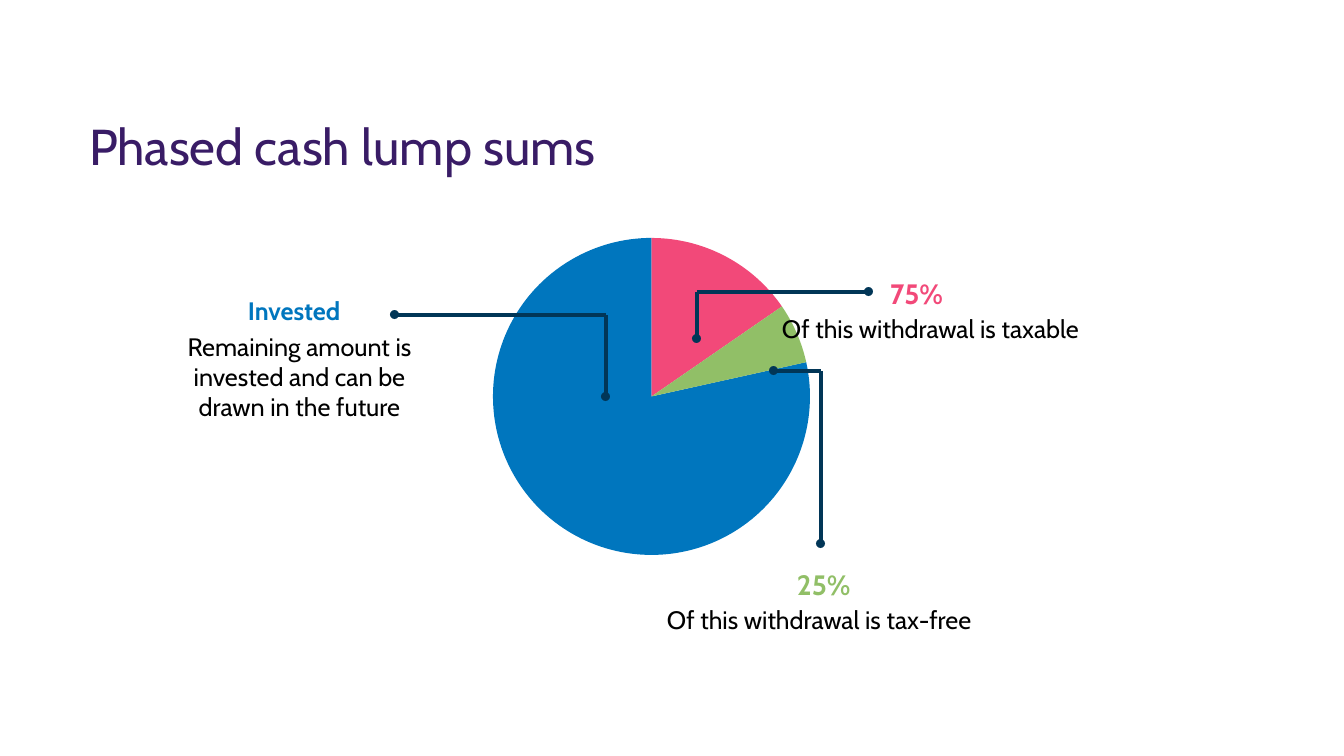
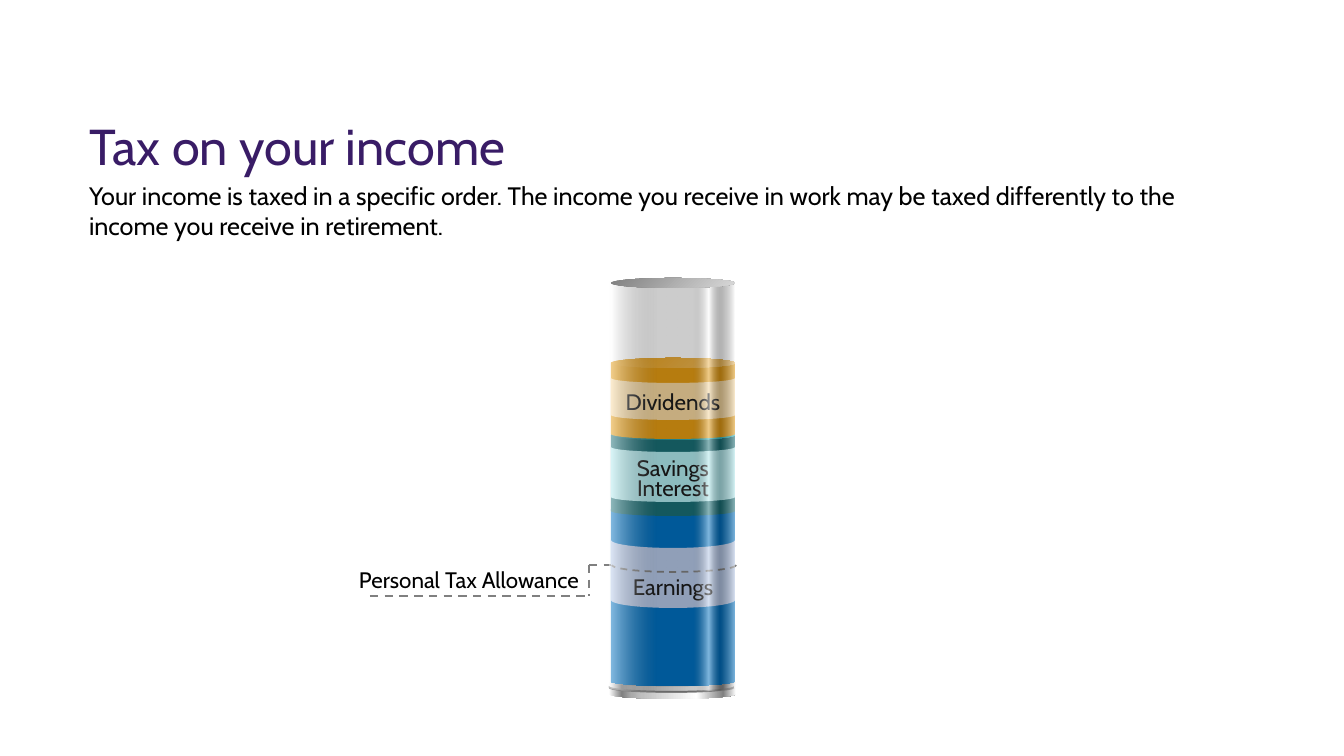
from math import cos, pi, sin

from lxml import etree
from pptx import Presentation
from pptx.dml.color import RGBColor
from pptx.enum.dml import MSO_LINE
from pptx.enum.shapes import MSO_CONNECTOR, MSO_SHAPE
from pptx.enum.text import MSO_ANCHOR, PP_ALIGN
from pptx.oxml import parse_xml
from pptx.oxml.ns import nsdecls, qn
from pptx.util import Emu, Pt

SCALE = 914400 / 100.8
FONT = "Cabin"
OVAL, PIE = MSO_SHAPE.OVAL, MSO_SHAPE.PIE
STRAIGHT, DASH = MSO_CONNECTOR.STRAIGHT, MSO_LINE.DASH
LEFT, MID, RIGHT = PP_ALIGN.LEFT, PP_ALIGN.CENTER, PP_ALIGN.RIGHT
TOP, CENTRE = MSO_ANCHOR.TOP, MSO_ANCHOR.MIDDLE

HEX = {
    "title": "391C66", "black": "000000", "ink": "1B1B1B", "navy": "013657",
    "pink": "F24979", "green": "91BF67", "blue": "0076BE", "grey": "808080",
    "earn": "0070C0", "earn_tint": "B4C7E7",
    "save": "196E75", "save_tint": "B0EAEE", "save_lid": "38C9D4",
    "gold": "E49B13", "gold_tint": "F7D89F", "gold_lid": "F2BF64",
    "silver": "D9D9D9", "steel": "AAAAAA", "ash": "BFBFBF", "white": "FFFFFF",
}

# Gradient stops: position, colour, opacity
METAL = [(0, "white", 100), (10, "grey", 100), (18, "steel", 100),
         (26, "ash", 100), (69, "white", 100), (90, "grey", 100),
         (100, "white", 100)]
GLASS = [(0, "white", 50), (2, "white", 50), (38, "black", 20),
         (67, "black", 20), (79, "white", 50), (88, "black", 30),
         (100, "white", 50)]


def px(n):
    return Emu(round(n * SCALE))


def rgb(name):
    return RGBColor.from_string(HEX[name])


# Shared drawing helpers
def paint(shape, fill, angle=0):
    """Fill with one colour name or a list of gradient stops."""
    shape.shadow.inherit = False
    shape.line.fill.background()
    if isinstance(fill, str):
        shape.fill.solid()
        shape.fill.fore_color.rgb = rgb(fill)
        return
    stops = "".join(
        f'<a:gs pos="{pos * 1000}"><a:srgbClr val="{HEX[name]}">'
        f'<a:alpha val="{alpha * 1000}"/></a:srgbClr></a:gs>'
        for pos, name, alpha in fill)
    grad = parse_xml(
        f'<a:gradFill {nsdecls("a")} rotWithShape="1"><a:gsLst>{stops}</a:gsLst>'
        f'<a:lin ang="{angle * 60000}" scaled="0"/></a:gradFill>')
    shape.fill.background()
    props = shape._element.spPr
    props.replace(props.find(qn("a:noFill")), grad)


def oval(slide, x, y, w, h, fill):
    shape = slide.shapes.add_shape(OVAL, px(x), px(y), px(w), px(h))
    paint(shape, fill, 45)


def line(slide, start, end, color, width, dash=None):
    link = slide.shapes.add_connector(
        STRAIGHT, *[px(n) for n in (*start, *end)])
    link.line.color.rgb = rgb(color)
    link.line.width = Pt(width)
    if dash:
        link.line.dash_style = dash
    etree.SubElement(link._element.spPr, qn("a:effectLst"))


def text(slide, box, words, size, color, bold=False, align=LEFT,
         anchor=TOP, inset=(10, 5)):
    frame = slide.shapes.add_textbox(*[px(n) for n in box]).text_frame
    frame.word_wrap = True
    frame.vertical_anchor = anchor
    frame.margin_left = frame.margin_right = px(inset[0])
    frame.margin_top = frame.margin_bottom = px(inset[1])
    frame.text = words
    para = frame.paragraphs[0]
    para.alignment = align
    font = para.runs[0].font
    font.name, font.size, font.bold = FONT, Pt(size), bold
    font.color.rgb = rgb(color)


def title(slide, words):
    text(slide, (89, 117, 1167, 57), words, 36, "title",
         anchor=CENTRE, inset=(0, 0))


# Curved outlines
def sag(x, y, w, dip, steps=32):
    """Points of a lower half ellipse, from left to right."""
    return [(x + w / 2 * (1 - cos(pi * i / steps)),
             y + dip * sin(pi * i / steps)) for i in range(steps + 1)]


def trace(slide, points, close):
    spots = [(px(x), px(y)) for x, y in points]
    form = slide.shapes.build_freeform(*spots[0], scale=1.0)
    form.add_line_segments(spots[1:], close=close)
    return form.convert_to_shape()


def wall(slide, x, w, top, base, dip, fill, flat=True):
    """Side of a cylinder; the top edge is flat or sags like the base."""
    rim = [(x, top), (x + w, top)] if flat else sag(x, top, w, dip)
    paint(trace(slide, rim + sag(x, base, w, dip)[::-1], True), fill)


# Pie slide
def pie(slide, x, y, size):
    for start, end, color in ((270, 325.4, "pink"), (347.5, 270, "blue"),
                              (325.4, 347.5, "green")):
        part = slide.shapes.add_shape(PIE, px(x), px(y), px(size), px(size))
        part.adjustments[0] = start * 0.6
        part.adjustments[1] = end * 0.6
        paint(part, color)


def leader(slide, x, y, points):
    """Bent line with a dot at each end, placed from the pie corner."""
    spots = [(x + dx, y + dy) for dx, dy in points]
    for start, end in zip(spots, spots[1:]):
        line(slide, start, end, "navy", 2.25)
    for dx, dy in (spots[0], spots[-1]):
        oval(slide, dx - 5, dy - 5, 9, 9, "navy")


def note(slide, box, indent, head, size, color, body, align=LEFT):
    x, y, w, h = box
    text(slide, (x + indent, y, 124, 42), head, size, color, bold=True)
    text(slide, (x, y + 36, w, h - 36), body, 18, "black", align=align)


def phased(slide):
    x, y = 493, 238
    pie(slide, x, y, 317)
    for points in (((204, 101), (204, 54), (376, 54)),
                   ((281, 133), (328, 133), (328, 306)),
                   ((113, 159), (113, 77), (-98, 77))):
        leader(slide, x, y, points)
    note(slide, (772, 272, 340, 76), 108, "75%", 20, "pink",
         "Of this withdrawal is taxable")
    note(slide, (657, 563, 340, 76), 130, "25%", 20, "green",
         "Of this withdrawal is tax-free")
    note(slide, (161, 290, 277, 138), 77, "Invested", 18, "blue",
         "Remaining amount is invested and can be drawn in the future", MID)
    title(slide, "Phased cash lump sums")


# Income slide
def layer(slide, x, y, w, span, dip, tint, names, words):
    """One band of income with a pale label strip and its words."""
    body, pale, lid = names
    top, base = span
    wall(slide, x, w, y + top, y + base, dip, body)
    wall(slide, x, w, y + tint[0], y + tint[1], dip, pale, flat=False)
    for word, drop in words:
        text(slide, (x + 2, y + drop, w - 4, 36), word, 16, "ink",
             align=MID, inset=(9, 4))
    oval(slide, x, y + top - dip, w, 2 * dip,
         [(0, body, 100), (100, lid, 100)])


def fund(slide, x, y, w):
    """Layers and metal foot of the cylinder."""
    layer(slide, x, y, w, (231, 404), 8, (262, 322),
          ("earn", "earn_tint", "earn"), [("Earnings", 291)])
    layer(slide, x, y, w, (157, 233), 5, (169, 219),
          ("save", "save_tint", "save_lid"),
          [("Interest", 192), ("Savings", 172)])
    layer(slide, x, y, w, (85, 156), 5, (100, 137),
          ("gold", "gold_tint", "gold_lid"), [("Dividends", 106)])
    wall(slide, x - 2, w + 3, y + 404, y + 416, 5, METAL, flat=False)
    wall(slide, x - 2, w + 1, y + 408, y + 410, 5, "grey", flat=False)


def glass(slide, x, y, w):
    wall(slide, x - 1, w, y + 4, y + 410, 4, GLASS)
    oval(slide, x, y, w, 10, [(0, "grey", 100), (100, "silver", 100)])


def limit(slide, x, y, w, h):
    """Dashed marker for the allowance, ending in a curve on the cylinder."""
    text(slide, (x, y, w, h), "Personal Tax Allowance", 16, "black",
         align=RIGHT, inset=(9, 4))
    bend, high, low = x + w + 1, y + 3, y + h - 2
    for start, end in (((x + 56, low), (bend, low)),
                       ((bend, high), (bend + 22, high)),
                       ((bend, high), (bend, low))):
        line(slide, start, end, "grey", 1.5, DASH)
    curve = trace(slide, sag(bend + 23, high, 124, 7)[::-1], False)
    curve.shadow.inherit = False
    curve.fill.background()
    curve.line.color.rgb = rgb("grey")
    curve.line.width = Pt(1.25)
    curve.line.dash_style = DASH


def income(slide):
    title(slide, "Tax on your income")
    text(slide, (89, 175, 1167, 72),
         "Your income is taxed in a specific order. The income you receive "
         "in work may be taxed differently to the income you receive in "
         "retirement.", 18, "black", inset=(0, 5))
    can = (611, 278, 124)
    fund(slide, *can)
    limit(slide, 314, 562, 274, 36)
    glass(slide, *can)


def main():
    deck = Presentation()
    deck.slide_width, deck.slide_height = px(1344), px(756)
    for build in (phased, income):
        build(deck.slides.add_slide(deck.slide_layouts[6]))
    deck.save("out.pptx")


if __name__ == "__main__":
    main()
